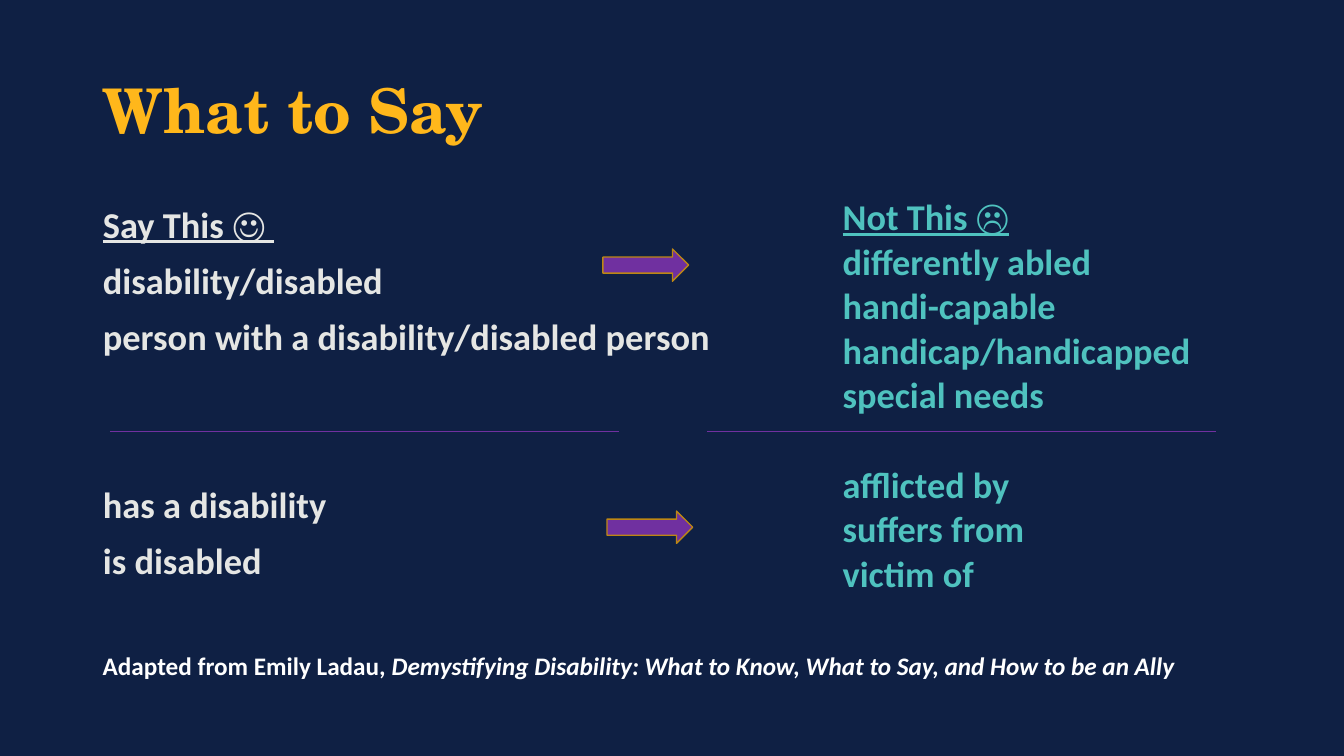
import pptx
import pptx.util
import pptx.dml.color
import pptx.enum.text
import pptx.enum.shapes
import pptx.oxml.ns
from lxml import etree
from dataclasses import dataclass

Inches = pptx.util.Inches
Pt = pptx.util.Pt
Anchor = pptx.enum.text.MSO_ANCHOR


@dataclass(frozen=True)
class Theme:
    background: str = "0F2044"
    title: str = "FFB71B"
    say: str = "E5E6E4"
    avoid: str = "4FC2BF"
    source: str = "FFFFFF"
    arrow: str = "7030A0"
    arrow_edge: str = "BD8714"
    title_font: str = "TeX Gyre Schola"
    text_font: str = "Calibri"
    title_size: float = 44
    say_size: float = 26
    avoid_size: float = 25.9
    source_size: float = 18


THEME = Theme()

TITLE = "What to Say"
SAY_GROUPS = [
    ["Say This ☺ ", "disability/disabled", "person with a disability/disabled person"],
    ["has a disability", "is disabled"],
]
AVOID_GROUPS = [
    ["Not This ☹", "differently abled", "handi-capable", "handicap/handicapped", "special needs"],
    ["afflicted by", "suffers from", "victim of"],
]
SOURCE = [
    ("Adapted from Emily Ladau", False),
    (", Demystifying Disability: What to Know, What to Say, and How to be an Ally", True),
]

LEFT = 0.92
COLUMN_TOP, COLUMN_HEIGHT = 2, 4.76
ARROWS = [(5.98, 2.47), (6.02, 5.07)]
ARROW_SIZE = (0.85, 0.32)
DIVIDER_TOP, DIVIDER_WIDTH = 4.28, 5.05
DIVIDER_LEFTS = [1.09, 7.01]


def rgb(value):
    return pptx.dml.color.RGBColor.from_string(value)


def apply_format(target, values):
    for name, value in values.items():
        setattr(target, name, value)


def place(shape, left, top, width, height):
    box = dict(left=left, top=top, width=width, height=height)
    apply_format(shape, {name: Inches(value) for name, value in box.items()})


def add_run(paragraph, text, color, size, font=THEME.text_font, **extra):
    run = paragraph.add_run()
    run.text = text
    apply_format(run.font, dict(name=font, size=Pt(size), bold=True, **extra))
    run.font.color.rgb = rgb(color)


def prepare_frame(shape, anchor=Anchor.TOP):
    frame = shape.text_frame
    apply_format(frame, dict(word_wrap=True, vertical_anchor=anchor,
                             auto_size=pptx.enum.text.MSO_AUTO_SIZE.NONE))
    return frame


def format_paragraph(paragraph, line_spacing, space_before=0):
    apply_format(paragraph, dict(line_spacing=line_spacing, space_before=Pt(space_before),
                                 space_after=Pt(0), alignment=pptx.enum.text.PP_ALIGN.LEFT))


def remove_bullet(paragraph):
    properties = paragraph._p.get_or_add_pPr()
    properties.set("marL", "0")
    properties.set("indent", "0")
    etree.SubElement(properties, pptx.oxml.ns.qn("a:buNone"))


def fill_column(shape, groups, color, size, line_spacing, gap, group_gap):
    frame = prepare_frame(shape)
    for group_index, group in enumerate(groups):
        for line_index, text in enumerate(group):
            heading = group_index == line_index == 0
            paragraph = frame.paragraphs[0] if heading else frame.add_paragraph()
            remove_bullet(paragraph)
            before = 0 if heading else gap if line_index else group_gap
            format_paragraph(paragraph, line_spacing, before)
            add_run(paragraph, text, color, size, underline=heading)


def add_arrow(slide, left, top):
    arrow = slide.shapes.add_shape(pptx.enum.shapes.MSO_SHAPE.RIGHT_ARROW,
                                   *map(Inches, (left, top, *ARROW_SIZE)))
    arrow.shadow.inherit = False
    arrow.fill.solid()
    arrow.fill.fore_color.rgb = rgb(THEME.arrow)
    arrow.line.color.rgb = rgb(THEME.arrow_edge)
    arrow.line.width = Pt(1)


def add_divider(slide, left):
    divider = slide.shapes.add_connector(
        pptx.enum.shapes.MSO_CONNECTOR.STRAIGHT,
        *map(Inches, (left, DIVIDER_TOP, left + DIVIDER_WIDTH, DIVIDER_TOP)))
    divider.line.color.rgb = rgb(THEME.arrow)
    divider.line.width = Pt(0.5)
    etree.SubElement(divider._element.spPr, pptx.oxml.ns.qn("a:effectLst"))


def main():
    presentation = pptx.Presentation()
    apply_format(presentation, dict(slide_width=Inches(13.33), slide_height=Inches(7.5)))
    slide = presentation.slides.add_slide(presentation.slide_layouts[1])
    slide.background.fill.solid()
    slide.background.fill.fore_color.rgb = rgb(THEME.background)

    title = slide.shapes.title
    place(title, LEFT, 0.4, 11.5, 1.45)
    paragraph = prepare_frame(title, Anchor.MIDDLE).paragraphs[0]
    format_paragraph(paragraph, 0.9)
    add_run(paragraph, TITLE, THEME.title, THEME.title_size, THEME.title_font)

    say = slide.placeholders[1]
    place(say, LEFT, COLUMN_TOP, 6.51, COLUMN_HEIGHT)
    fill_column(say, SAY_GROUPS, THEME.say, THEME.say_size, 0.9, gap=12, group_gap=92)

    for position in ARROWS:
        add_arrow(slide, *position)
    for left in DIVIDER_LEFTS:
        add_divider(slide, left)

    avoid = slide.shapes.add_textbox(*map(Inches, (8.26, COLUMN_TOP, 4.64, COLUMN_HEIGHT)))
    fill_column(avoid, AVOID_GROUPS, THEME.avoid, THEME.avoid_size, 0.7, gap=10, group_gap=42)

    source = slide.shapes.add_textbox(*map(Inches, (LEFT, 6.44, 11.65, 0.37)))
    paragraph = prepare_frame(source).paragraphs[0]
    format_paragraph(paragraph, 0.9)
    for text, italic in SOURCE:
        add_run(paragraph, text, THEME.source, THEME.source_size, italic=italic)

    presentation.save("out.pptx")


if __name__ == "__main__":
    main()
